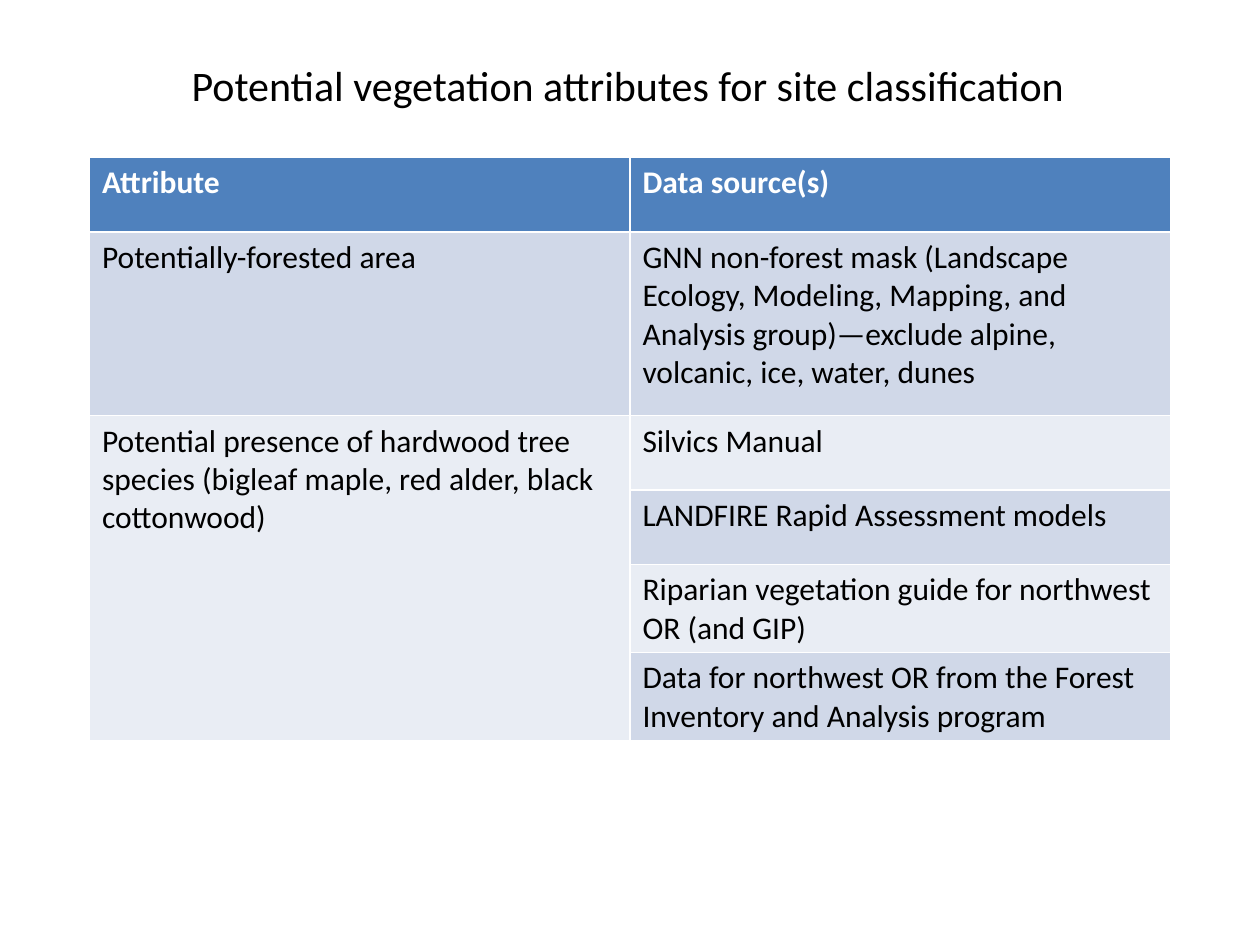
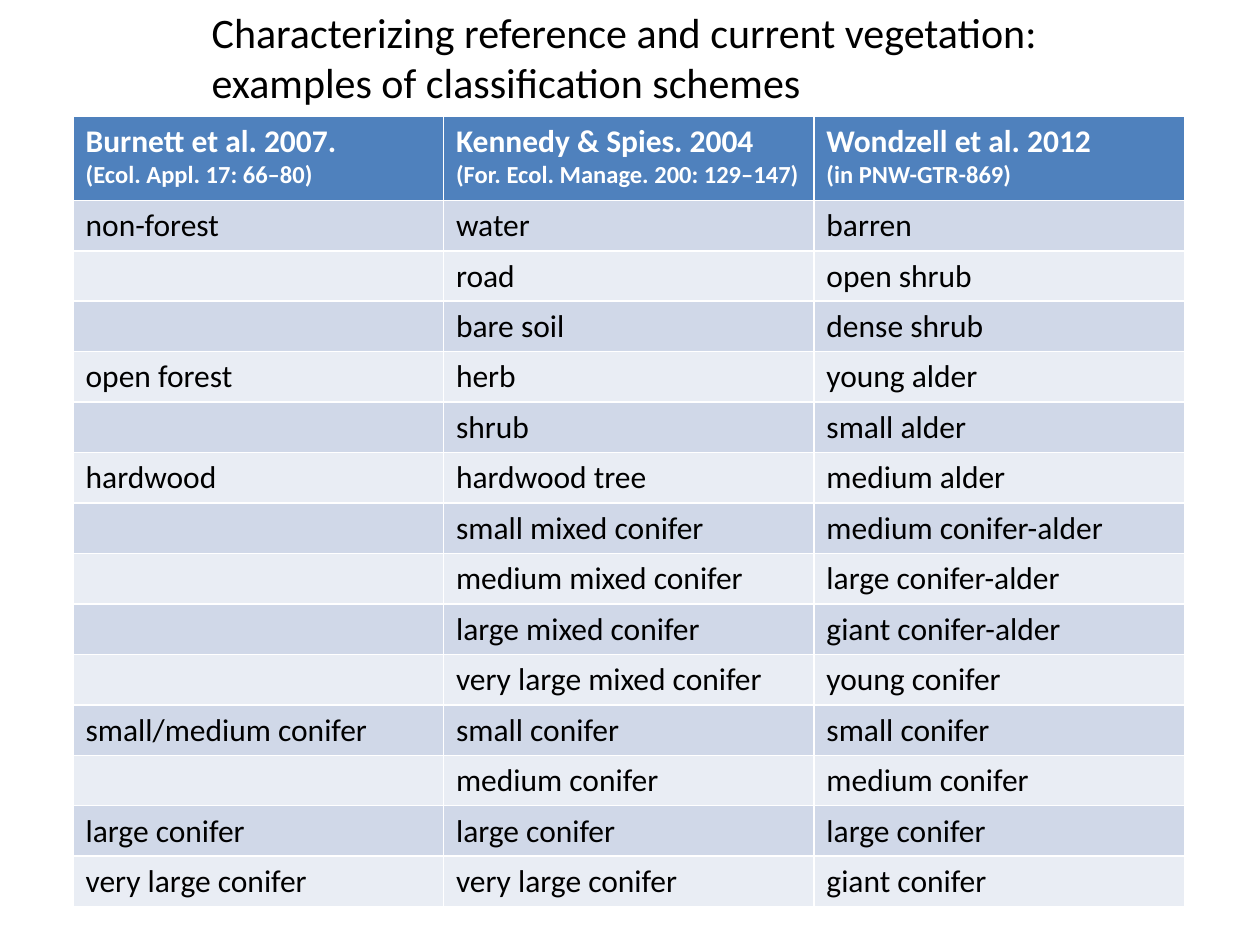
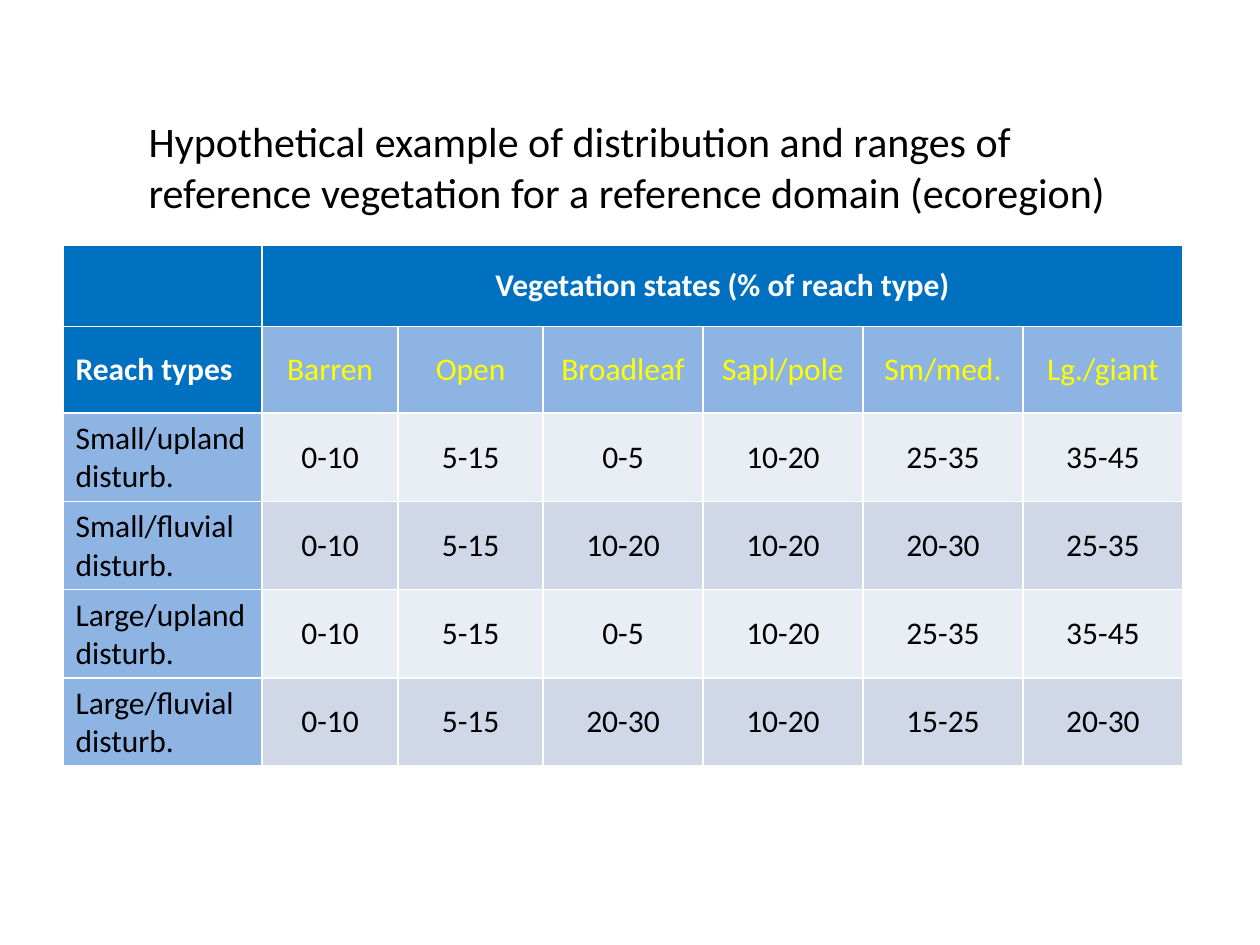
from pptx import Presentation
from pptx.dml.color import RGBColor
from pptx.enum.text import MSO_ANCHOR, MSO_AUTO_SIZE, PP_ALIGN
from pptx.util import Inches, Pt

TOP, MIDDLE = MSO_ANCHOR.TOP, MSO_ANCHOR.MIDDLE
LEFT, CENTER = PP_ALIGN.LEFT, PP_ALIGN.CENTER
FIT_SHAPE = MSO_AUTO_SIZE.SHAPE_TO_FIT_TEXT

FONT = "Calibri"
BLACK, WHITE, YELLOW = "000000", "FFFFFF", "FFFF00"
HEADER_BLUE, STRONG_BLUE, LABEL_BLUE = "4F81BD", "0070C0", "8EB4E3"
BANDS = ("E9EDF4", "D0D8E8")  # even rows, odd rows
TITLE_SIZE, CELL_SIZE, CITATION_SIZE = 24, 18, 14
TITLE_ONLY = 5

ATTRIBUTES = [
    ("Attribute", "Data source(s)"),
    ("Potentially-forested area",
     "GNN non-forest mask (Landscape Ecology, Modeling, Mapping, and Analysis group)"
     "—exclude alpine, volcanic, ice, water, dunes"),
    ("Potential presence of hardwood tree species "
     "(bigleaf maple, red alder, black cottonwood)", "Silvics Manual"),
    ("", "LANDFIRE Rapid Assessment models"),
    ("", "Riparian vegetation guide for northwest OR (and GIP)"),
    ("", "Data for northwest OR from the Forest Inventory and Analysis program"),
]

SCHEMES = [
    ("Burnett et al. 2007.\n(Ecol. Appl. 17: 66–80)",
     "Kennedy & Spies. 2004\n(For. Ecol. Manage. 200: 129–147)",
     "Wondzell et al. 2012\n(in PNW-GTR-869)"),
    ("non-forest", "water", "barren"),
    ("", "road", "open shrub"),
    ("", "bare soil", "dense shrub"),
    ("open forest", "herb", "young alder"),
    ("", "shrub", "small alder"),
    ("hardwood", "hardwood tree", "medium alder"),
    ("", "small mixed conifer", "medium conifer-alder"),
    ("", "medium mixed conifer", "large conifer-alder"),
    ("", "large mixed conifer", "giant conifer-alder"),
    ("", "very large mixed conifer", "young conifer"),
    ("small/medium conifer", "small conifer", "small conifer"),
    ("", "medium conifer", "medium conifer"),
    ("large conifer", "large conifer", "large conifer"),
    ("very large conifer", "very large conifer", "giant conifer"),
]

REACHES = [
    ("", "Vegetation states (% of reach type)", "", "", "", "", ""),
    ("Reach types", "Barren", "Open", "Broadleaf", "Sapl/pole", "Sm/med.", "Lg./giant"),
    ("Small/upland disturb.", "0-10", "5-15", "0-5", "10-20", "25-35", "35-45"),
    ("Small/fluvial disturb.", "0-10", "5-15", "10-20", "10-20", "20-30", "25-35"),
    ("Large/upland disturb.", "0-10", "5-15", "0-5", "10-20", "25-35", "35-45"),
    ("Large/fluvial disturb.", "0-10", "5-15", "20-30", "10-20", "15-25", "20-30"),
]


def rgb(color):
    return RGBColor.from_string(color)


def format_paragraph(p, size, color, bold=False, align=LEFT):
    p.alignment = align
    for r in p.runs:
        r.font.name = FONT
        r.font.size = Pt(size)
        r.font.bold = bold
        r.font.color.rgb = rgb(color)


def add_titled_slide(prs, title, left, top, width, height):
    s = prs.slides.add_slide(prs.slide_layouts[TITLE_ONLY])
    sp = s.shapes.title
    sp.left, sp.top = Inches(left), Inches(top)
    sp.width, sp.height = Inches(width), Inches(height)
    tf = sp.text_frame
    tf.text = title
    tf.word_wrap = True
    tf.auto_size = FIT_SHAPE
    tf.vertical_anchor = TOP
    format_paragraph(tf.paragraphs[0], TITLE_SIZE, BLACK)
    return s


def banded_style(row, col):
    """Return fill, text colour, bold, alignment and anchor of a cell."""
    if row == 0:
        return HEADER_BLUE, WHITE, True, LEFT, TOP
    return BANDS[row % 2], BLACK, False, LEFT, TOP


def reach_style(row, col):
    """Like banded_style, with a label column and a second header row."""
    if row == 0 or (row, col) == (1, 0):
        return STRONG_BLUE, WHITE, True, CENTER if col else LEFT, MIDDLE
    if row == 1:
        return LABEL_BLUE, YELLOW, False, CENTER, MIDDLE
    if col == 0:
        return LABEL_BLUE, BLACK, False, LEFT, TOP
    return BANDS[row % 2], BLACK, False, CENTER, MIDDLE


def add_data_table(s, data, left, top, widths, heights, style=banded_style):
    table = s.shapes.add_table(len(data), len(widths), Inches(left), Inches(top),
                               Inches(sum(widths)), Inches(sum(heights))).table
    for column, width in zip(table.columns, widths):
        column.width = Inches(width)
    for row, height in zip(table.rows, heights):
        row.height = Inches(height)
    for i, texts in enumerate(data):
        for j, text in enumerate(texts):
            fill, color, bold, align, anchor = style(i, j)
            cell = table.cell(i, j)
            cell.fill.solid()
            cell.fill.fore_color.rgb = rgb(fill)
            cell.vertical_anchor = anchor
            cell.text_frame.text = text
            for k, p in enumerate(cell.text_frame.paragraphs):
                size = CITATION_SIZE if k else CELL_SIZE
                format_paragraph(p, size, color, bold, align)
    return table


def main():
    prs = Presentation()
    prs.slide_width, prs.slide_height = Inches(10), Inches(7.5)

    s = add_titled_slide(prs, "Potential vegetation attributes for site classification",
                         1.42, 0.42, 7.17, 0.5)
    table = add_data_table(s, ATTRIBUTES, 0.71, 1.25, [4.29] * 2,
                           [0.59, 1.46, 0.59, 0.59, 0.7, 0.7])
    table.cell(2, 0).merge(table.cell(5, 0))

    s = add_titled_slide(prs, "Characterizing reference and current vegetation: "
                         "examples of classification schemes", 1.58, 0, 6.83, 0.91)
    add_data_table(s, SCHEMES, 0.58, 0.92, [2.94] * 3,
                   [0.67] + [0.4] * (len(SCHEMES) - 1))

    s = add_titled_slide(prs, "Hypothetical example of distribution and ranges of reference "
                         "vegetation for a reference domain (ecoregion)",
                         1.08, 0.87, 7.83, 0.91)
    table = add_data_table(s, REACHES, 0.5, 1.95, [1.58, 1.08, 1.15] + [1.27] * 4,
                           [0.64, 0.69] + [0.7] * 4, reach_style)
    table.cell(0, 1).merge(table.cell(0, 6))

    prs.save("out.pptx")


if __name__ == "__main__":
    main()
